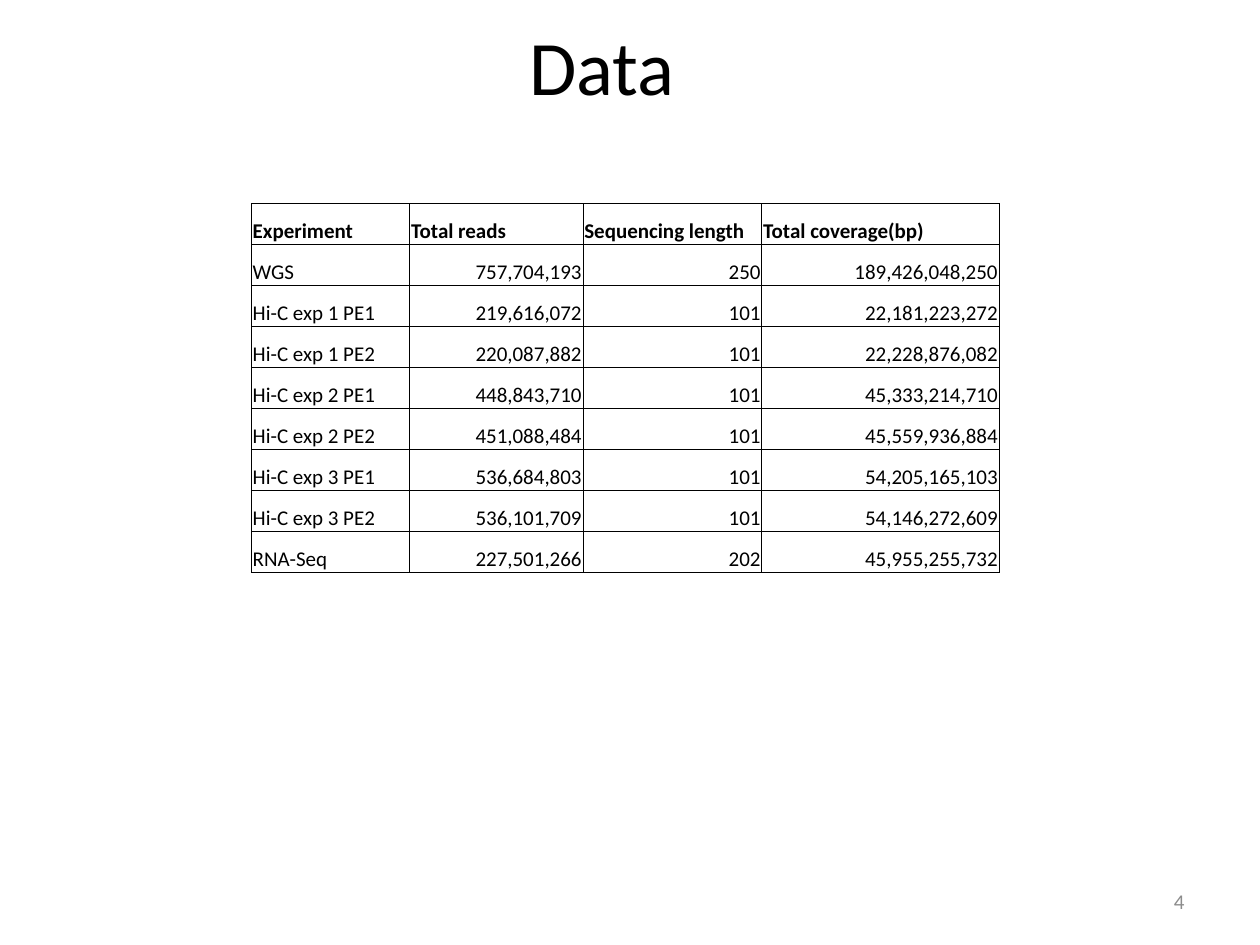
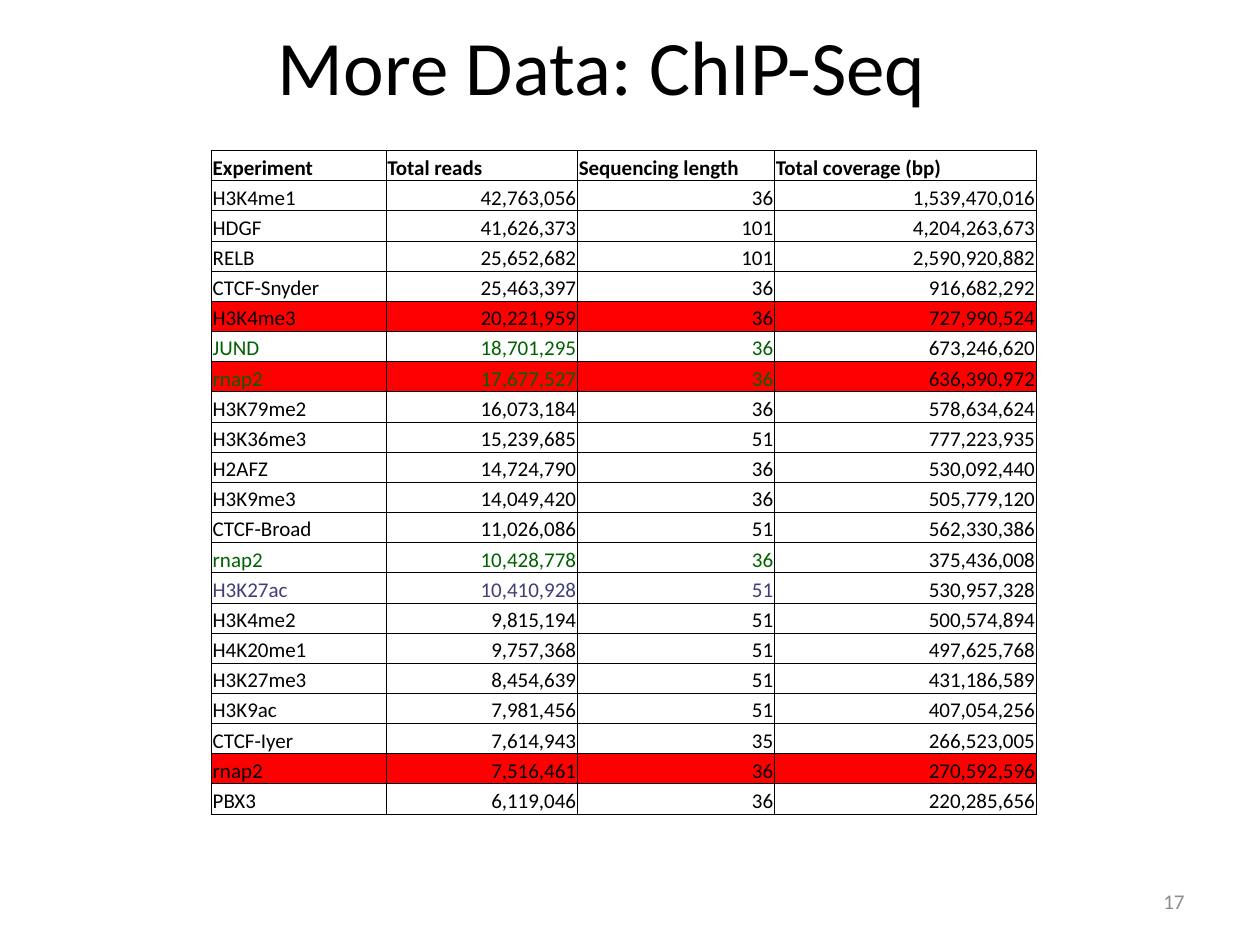
from lxml import etree
from pptx import Presentation
from pptx.dml.color import RGBColor
from pptx.enum import text
from pptx.oxml import ns
from pptx.util import Pt

BLACK = RGBColor(0x00, 0x00, 0x00)
GREY = RGBColor(0x8C, 0x8C, 0x8C)
RED = RGBColor(0xFF, 0x00, 0x00)
GREEN = RGBColor(0x00, 0x61, 0x00)
BLUE = RGBColor(0x3F, 0x3F, 0x76)
LEFT, MID, RIGHT = text.PP_ALIGN.LEFT, text.PP_ALIGN.CENTER, text.PP_ALIGN.RIGHT
INSET = {"margin_left": Pt(0.75), "margin_right": Pt(0.75),
         "margin_top": Pt(0.75), "margin_bottom": 0,
         "vertical_anchor": text.MSO_ANCHOR.BOTTOM}

# Each row: experiment, reads, length, then text colour and fill if marked
RUNS = [
    ("WGS", 757704193, 250),
    ("Hi-C exp 1 PE1", 219616072, 101),
    ("Hi-C exp 1 PE2", 220087882, 101),
    ("Hi-C exp 2 PE1", 448843710, 101),
    ("Hi-C exp 2 PE2", 451088484, 101),
    ("Hi-C exp 3 PE1", 536684803, 101),
    ("Hi-C exp 3 PE2", 536101709, 101),
    ("RNA-Seq", 227501266, 202),
]
CHIP = [
    ("H3K4me1", 42763056, 36),
    ("HDGF", 41626373, 101),
    ("RELB", 25652682, 101),
    ("CTCF-Snyder", 25463397, 36),
    ("H3K4me3", 20221959, 36, BLACK, RED),
    ("JUND", 18701295, 36, GREEN),
    ("rnap2", 17677527, 36, GREEN, RED),
    ("H3K79me2", 16073184, 36),
    ("H3K36me3", 15239685, 51),
    ("H2AFZ", 14724790, 36),
    ("H3K9me3", 14049420, 36),
    ("CTCF-Broad", 11026086, 51),
    ("rnap2", 10428778, 36, GREEN),
    ("H3K27ac", 10410928, 51, BLUE),
    ("H3K4me2", 9815194, 51),
    ("H4K20me1", 9757368, 51),
    ("H3K27me3", 8454639, 51),
    ("H3K9ac", 7981456, 51),
    ("CTCF-Iyer", 7614943, 35),
    ("rnap2", 7516461, 36, BLACK, RED),
    ("PBX3", 6119046, 36),
]

# Title, page, left, top, column widths, row height, last heading, rows
SLIDES = [
    ("Data", 4, 143.7, 116.4, (90.5, 99, 102.2, 135.6), 23.4,
     "Total coverage(bp)", RUNS),
    ("More Data: ChIP-Seq", 17, 120.8, 86, (99.8, 109.4, 112.6, 149.6), 17.25,
     "Total coverage (bp)", CHIP),
]


def write(frame, words, size, color, align, bold=False):
    para = frame.paragraphs[0]
    para.alignment = align
    run = para.add_run()
    run.text = words
    form = {"name": "Calibri", "size": Pt(size), "bold": bold}
    for key, val in form.items():
        setattr(run.font, key, val)
    run.font.color.rgb = color


def edge(cell):
    props = cell._tc.get_or_add_tcPr()
    for spot, side in enumerate(("lnL", "lnR", "lnT", "lnB")):
        line = etree.Element(ns.qn("a:" + side), w=str(Pt(0.5)))
        fill = etree.SubElement(line, ns.qn("a:solidFill"))
        etree.SubElement(fill, ns.qn("a:srgbClr"), val=str(BLACK))
        props.insert(spot, line)


deck = Presentation()
deck.slide_width, deck.slide_height = Pt(720), Pt(540)

for name, page, left, top, widths, high, last, rows in SLIDES:
    slide = deck.slides.add_slide(deck.slide_layouts[5])

    # Title
    title = slide.shapes.title
    place = {"left": Pt(20), "top": Pt(-8), "width": Pt(648), "height": Pt(90)}
    for key, val in place.items():
        setattr(title, key, val)
    title.text_frame.auto_size = text.MSO_AUTO_SIZE.NONE
    title.text_frame.vertical_anchor = text.MSO_ANCHOR.MIDDLE
    write(title.text_frame, name, 44, BLACK, MID)

    # Table grid
    count = len(rows) + 1
    table = slide.shapes.add_table(count, len(widths), Pt(left), Pt(top),
                                   Pt(sum(widths)), Pt(high * count)).table
    table.first_row = table.horz_banding = False
    for col, wide in zip(table.columns, widths):
        col.width = Pt(wide)
    for row in table.rows:
        row.height = Pt(high)

    # Cells: coverage is reads times length, and stays black
    heads = ("Experiment", "Total reads", "Sequencing length", last)
    lines = [(heads, BLACK, None)]
    for exp, reads, size, *mark in rows:
        color, fill = (mark + [BLACK, None][len(mark):])
        nums = [f"{num:,}" for num in (reads, size, reads * size)]
        lines.append(([exp, *nums], color, fill))
    for r, (words, color, fill) in enumerate(lines):
        for c, word in enumerate(words):
            cell = table.cell(r, c)
            for key, val in INSET.items():
                setattr(cell, key, val)
            if fill:
                cell.fill.solid()
                cell.fill.fore_color.rgb = fill
            else:
                cell.fill.background()
            edge(cell)
            write(cell.text_frame, word, 12, BLACK if c == 3 else color,
                  RIGHT if r and c else LEFT, bold=r == 0)

    # Page number
    foot = slide.shapes.add_textbox(Pt(516), Pt(500.5), Pt(168), Pt(28.75))
    foot.text_frame.word_wrap = True
    foot.text_frame.vertical_anchor = text.MSO_ANCHOR.MIDDLE
    write(foot.text_frame, str(page), 12, GREY, RIGHT)

deck.save("out.pptx")
